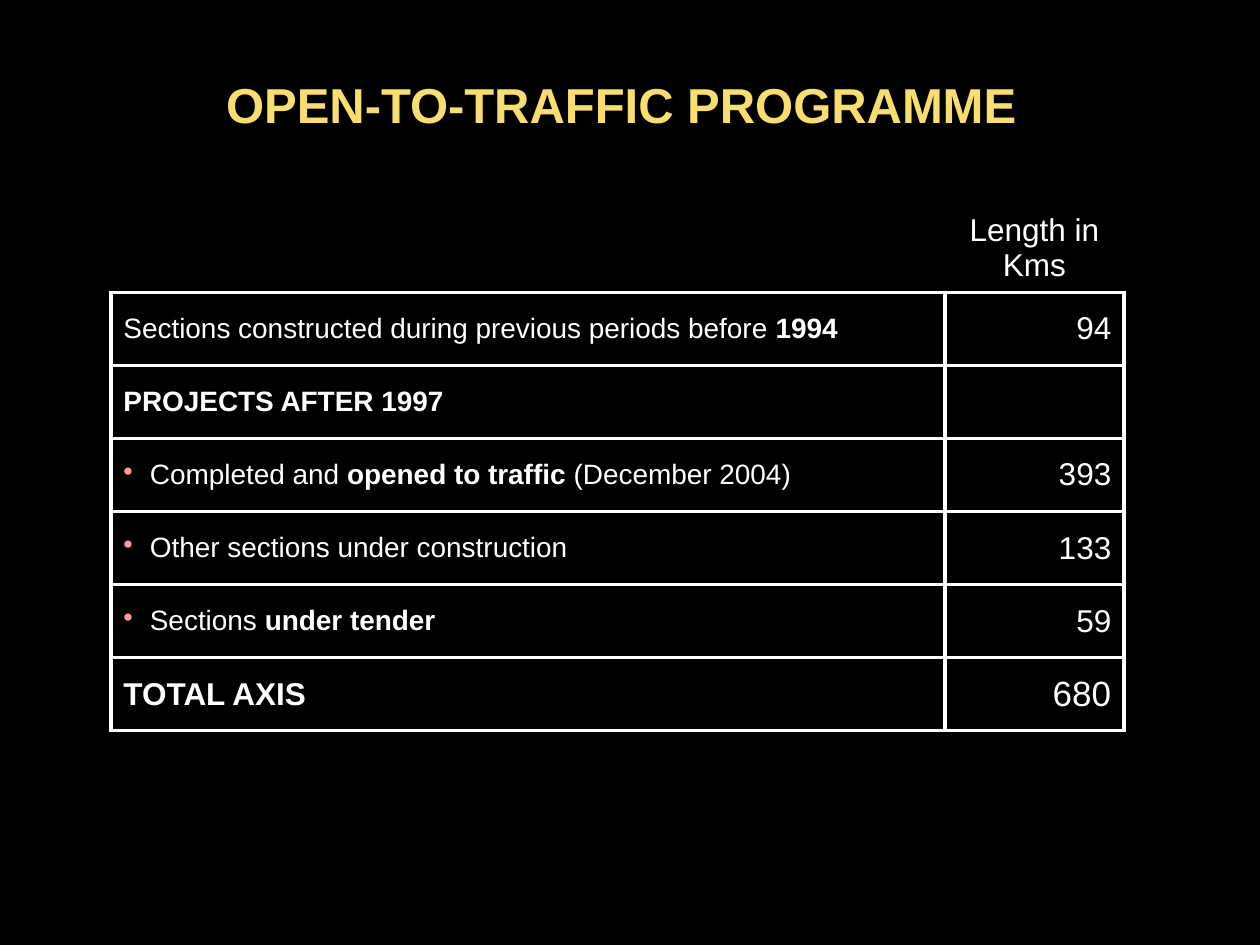
from lxml import etree
from pptx import Presentation
from pptx.dml.color import RGBColor
from pptx.enum.text import MSO_ANCHOR, MSO_AUTO_SIZE, PP_ALIGN
from pptx.oxml import parse_xml
from pptx.oxml.ns import nsdecls, qn
from pptx.util import Inches, Pt

MID = MSO_ANCHOR.MIDDLE
FIXED = MSO_AUTO_SIZE.NONE
LEFT, MID_COL, RIGHT = PP_ALIGN.LEFT, PP_ALIGN.CENTER, PP_ALIGN.RIGHT
BLACK, WHITE, GOLD, PINK = "000000", "FFFFFF", "F8DE6E", "FF9999"
PLAIN = "{2D5ABB26-0587-4C30-8999-92F81FD0307C}"


def color(code):
    return RGBColor.from_string(code)


def style(para, size, code, align):
    para.alignment = align
    para.font.name = "Arial"
    para.font.size = Pt(size)
    para.font.color.rgb = color(code)


prs = Presentation()
prs.slide_width, prs.slide_height = Inches(10), Inches(7.5)
slide = prs.slides.add_slide(prs.slide_layouts[5])
slide.background.fill.solid()
slide.background.fill.fore_color.rgb = color(BLACK)

# Bold parts of a label stand at odd places in its list.
rows = [
    ([], 16, False, "Length in Kms", 18),
    (["Sections constructed during previous periods before ", "1994"], 16, False, "94", 18),
    (["", "PROJECTS AFTER 1997"], 16, False, "", 18),
    (["Completed and ", "opened to traffic ", "(December 2004)"], 16, True, "393", 18),
    (["Other sections under construction"], 16, True, "133", 18),
    (["Sections ", "under tender"], 16, True, "59", 18),
    (["", "TOTAL AXIS"], 18, False, "680", 20),
]

frame = slide.shapes.add_table(
    len(rows), 2, Inches(0.88), Inches(1.62), Inches(8.04), Inches(4.2))
table = frame.table
table.first_row = table.horz_banding = False
table._tbl.tblPr.find(qn("a:tableStyleId")).text = PLAIN
table.columns[0].width = Inches(6.62)
table.columns[1].width = Inches(1.42)

for i, (parts, size, listed, value, big) in enumerate(rows):
    table.rows[i].height = Inches(0.58 if i else 0.7)
    label, number = table.cell(i, 0), table.cell(i, 1)

    para = label.text_frame.paragraphs[0]
    style(para, size, WHITE, LEFT)
    for j, part in enumerate(parts):
        if part:
            run = para.add_run()
            run.text = part
            run.font.bold = j % 2 == 1
    if listed:
        props = para._p.get_or_add_pPr()
        props.set("marL", str(Inches(0.21)))
        props.set("indent", str(-Inches(0.21)))
        tint = parse_xml(
            f'<a:buClr {nsdecls("a")}><a:srgbClr val="{PINK}"/></a:buClr>')
        dot = parse_xml(f'<a:buChar {nsdecls("a")} char="•"/>')
        props.insert(0, tint)
        tint.addnext(dot)

    number.text = value
    style(number.text_frame.paragraphs[0], big, WHITE, RIGHT if i else MID_COL)

    for cell in (label, number):
        cell.vertical_anchor = MID
        props = cell._tc.get_or_add_tcPr()
        for side in ("L", "R", "T", "B") if i else ("B",):
            line = etree.SubElement(props, qn(f"a:ln{side}"), w=str(Pt(2.25)))
            fill = etree.SubElement(line, qn("a:solidFill"))
            etree.SubElement(fill, qn("a:srgbClr"), val=WHITE)
        cell.fill.background()

title = slide.shapes.title
title.left, title.top = Inches(1.4), Inches(0.54)
title.width, title.height = Inches(7.06), Inches(0.57)
title.text = "OPEN-TO-TRAFFIC PROGRAMME"
title.text_frame.auto_size = FIXED
title.text_frame.vertical_anchor = MID
head = title.text_frame.paragraphs[0]
style(head, 28, GOLD, MID_COL)
head.font.bold = True

prs.save("out.pptx")
